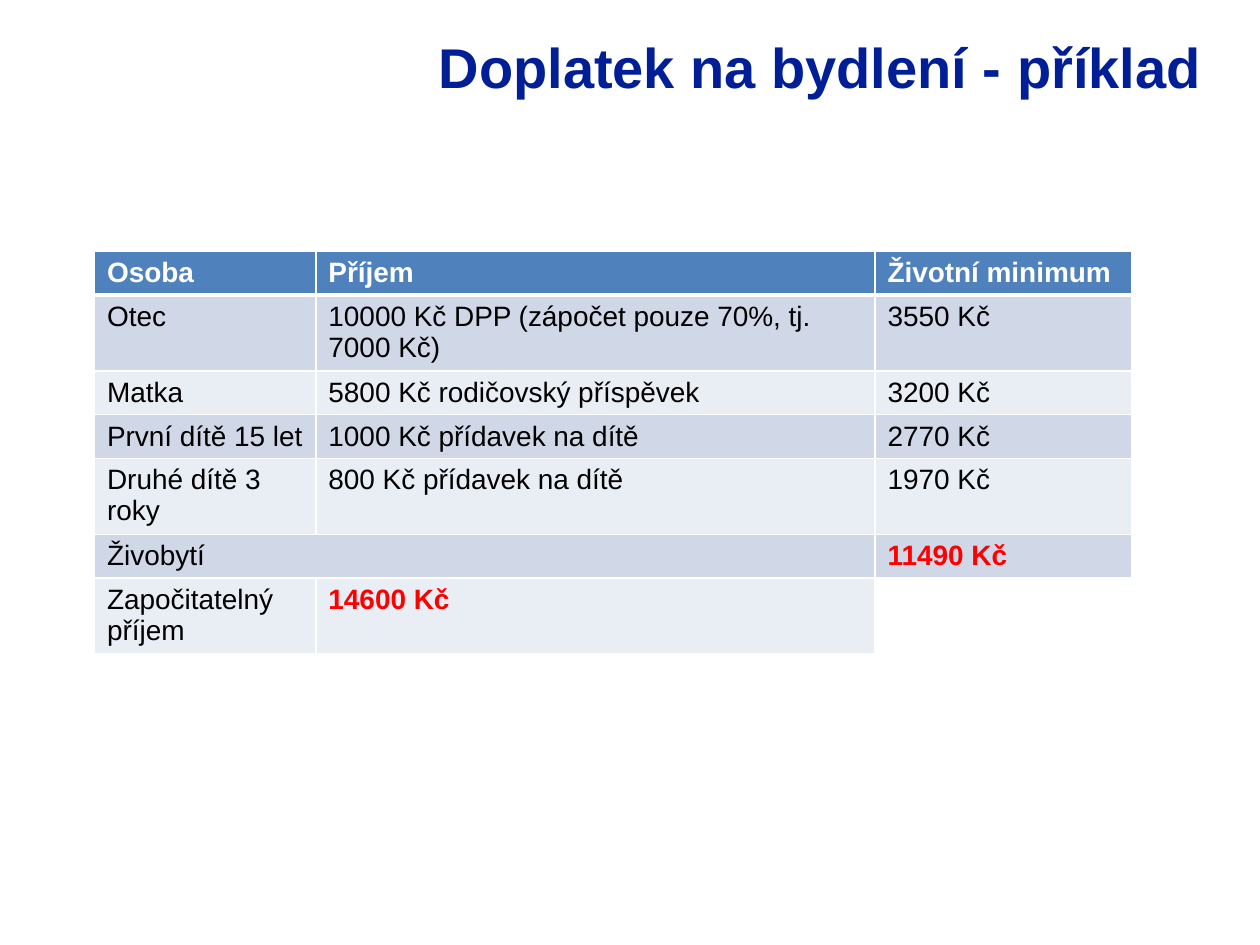
from dataclasses import dataclass

from lxml import etree
from pptx import Presentation
from pptx.dml.color import RGBColor
from pptx.enum import text
from pptx.oxml import ns
from pptx.util import Pt


@dataclass(frozen=True)
class Theme:
    font: str = "Arial"
    head: int = 32
    body: int = 16
    navy: str = "001E96"
    blue: str = "4F81BD"
    bands: tuple = ("E9EDF4", "D0D8E8")
    white: str = "FFFFFF"
    black: str = "000000"
    red: str = "FF0000"


THEME = Theme()

ROWS = [
    ("Osoba", "Příjem", "Životní minimum"),
    ("Otec", "10000 Kč DPP (zápočet pouze 70%, tj. 7000 Kč)", "3550 Kč"),
    ("Matka", "5800 Kč rodičovský příspěvek", "3200 Kč"),
    ("První dítě 15 let", "1000 Kč přídavek na dítě", "2770 Kč"),
    ("Druhé dítě 3 roky", "800 Kč přídavek na dítě", "1970 Kč"),
    ("Živobytí", "", "11490 Kč"),
    ("Započitatelný příjem", "14600 Kč", ""),
]
WIDTHS = (126.5, 319.5, 146.5)
ONE, TWO = 25, 43.4
HEIGHTS = (ONE, TWO, ONE, ONE, TWO, ONE, TWO)
TOTALS = {(5, 2), (6, 1)}
JOINED = (5, 0), (5, 1)
BLANK = (6, 2)


def style(frame, size, color, bold):
    for para in frame.paragraphs:
        for run in para.runs:
            font = run.font
            font.name, font.size, font.bold = THEME.font, Pt(size), bold
            font.color.rgb = RGBColor.from_string(color)


def place(shape, box):
    shape.left, shape.top, shape.width, shape.height = map(Pt, box)


def edge(cell, sides):
    """Draw white cell borders; sides maps L, R, T, B to widths in that order."""
    props = cell._tc.get_or_add_tcPr()
    for spot, (side, width) in enumerate(sides.items()):
        line = etree.Element(ns.qn(f"a:ln{side}"), w=str(Pt(width)))
        fill = etree.SubElement(line, ns.qn("a:solidFill"))
        etree.SubElement(fill, ns.qn("a:srgbClr"), val=THEME.white)
        props.insert(spot, line)


def add_title(slide, box):
    title = slide.shapes.title
    place(title, box)
    frame = title.text_frame
    frame.text = "Doplatek na bydlení - příklad"
    frame.vertical_anchor = text.MSO_ANCHOR.TOP
    frame.paragraphs[0].alignment = text.PP_ALIGN.RIGHT
    style(frame, THEME.head, THEME.navy, True)


def fill_cell(cell, row, col, words):
    head, total = row == 0, (row, col) in TOTALS
    if words:
        cell.text_frame.text = words
        color = THEME.white if head else THEME.red if total else THEME.black
        style(cell.text_frame, THEME.body, color, head or total)
    if (row, col) == BLANK:
        cell.fill.background()
    else:
        cell.fill.solid()
        shade = THEME.blue if head else THEME.bands[row % 2]
        cell.fill.fore_color.rgb = RGBColor.from_string(shade)
    edge(cell, {"L": 1, "R": 1, "T": 3 if row == 1 else 1, "B": 3 if head else 1})


def add_grid(slide, left, top):
    box = left, top, sum(WIDTHS), sum(HEIGHTS)
    table = slide.shapes.add_table(len(ROWS), len(WIDTHS), *map(Pt, box)).table
    for col, width in zip(table.columns, WIDTHS):
        col.width = Pt(width)
    for row, height in zip(table.rows, HEIGHTS):
        row.height = Pt(height)
    for r, words in enumerate(ROWS):
        for c, word in enumerate(words):
            fill_cell(table.cell(r, c), r, c, word)
    start, end = JOINED
    table.cell(*start).merge(table.cell(*end))


def main():
    deck = Presentation()
    deck.slide_width, deck.slide_height = Pt(720), Pt(540)
    slide = deck.slides.add_slide(deck.slide_layouts[5])
    add_title(slide, (172.8, 15, 521.3, 108))
    add_grid(slide, 54, 143.5)
    deck.save("out.pptx")


if __name__ == "__main__":
    main()
